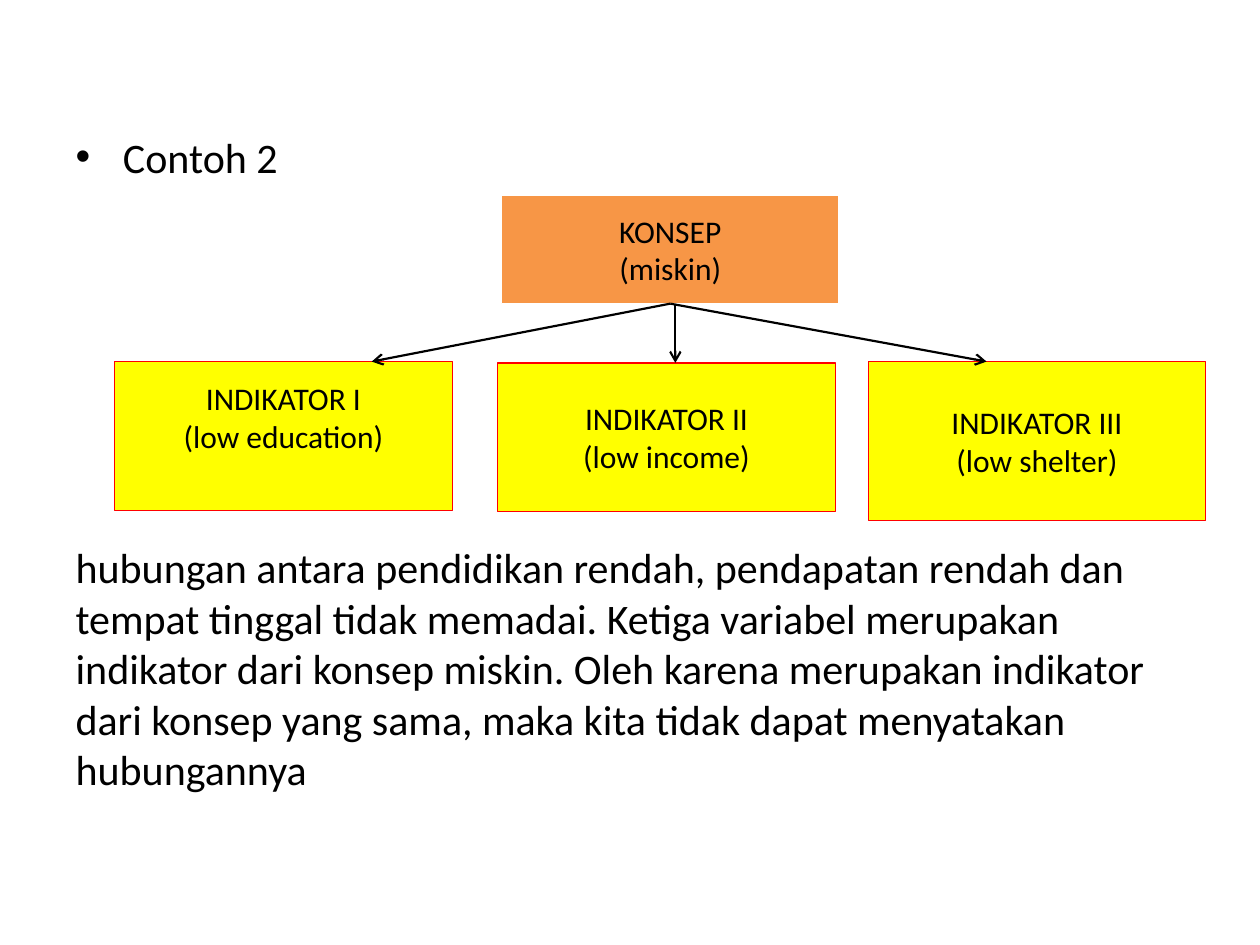
"""Build a slide that links the concept of poverty to its three indicators."""
from lxml import etree
from pptx import Presentation
from pptx import util as u
from pptx.dml.color import RGBColor
from pptx.enum import shapes, text
from pptx.oxml.ns import qn

BLACK = RGBColor(0, 0, 0)
WHITE = RGBColor(255, 255, 255)
ORANGE = RGBColor(0xF7, 0x96, 0x46)
YELLOW = RGBColor(255, 255, 0)
RED = RGBColor(255, 0, 0)

deck = Presentation()
deck.slide_width, deck.slide_height = u.Inches(10), u.Inches(7.5)
COLUMN, ROW = deck.slide_width / 100, deck.slide_height / 75


def place(column, row):
    return round(column * COLUMN), round(row * ROW)


def style(para, size):
    para.font.name = "Calibri"
    para.font.size = u.Pt(size)
    para.font.color.rgb = BLACK


page = deck.slides.add_slide(deck.slide_layouts.get_by_name("Title and Content"))
title = page.shapes.title.element
title.getparent().remove(title)

body = page.placeholders[1]
body.left, body.top = place(5, 9.9)
body.width, body.height = place(90, 57.1)
frame = body.text_frame
frame.auto_size = text.MSO_AUTO_SIZE.NONE
frame.text = (
    "Contoh 2\n"
    "hubungan antara pendidikan rendah, pendapatan rendah dan tempat tinggal "
    "tidak memadai. Ketiga variabel merupakan indikator dari konsep miskin. "
    "Oleh karena merupakan indikator dari konsep yang sama, maka kita tidak "
    "dapat menyatakan hubungannya"
)
heading, explanation = frame.paragraphs
heading.space_before = u.Pt(0)
explanation.space_before = u.Pt(206)
properties = explanation._p.get_or_add_pPr()
properties.set("marL", "0")
properties.set("indent", "0")
etree.SubElement(properties, qn("a:buNone"))
for para in frame.paragraphs:
    style(para, 24)

BOX_WIDTH = 26.8
boxes = {}
for name, detail, column, row, height, fill, line, bottom in (
    ("KONSEP", "(miskin)", 39.8, 15.5, 8.6, ORANGE, WHITE, 0.05),
    ("INDIKATOR I", "(low education)", 9.1, 28.7, 11.8, YELLOW, RED, 0.35),
    ("INDIKATOR II", "(low income)", 39.5, 28.8, 11.8, YELLOW, RED, 0.05),
    ("INDIKATOR III", "(low shelter)", 68.9, 28.7, 12.6, YELLOW, RED, 0.05),
):
    box = page.shapes.add_shape(
        shapes.MSO_SHAPE.RECTANGLE, *place(column, row), *place(BOX_WIDTH, height)
    )
    box.shadow.inherit = False
    box.fill.solid()
    box.fill.fore_color.rgb = fill
    box.line.color.rgb = line
    box.line.width = u.Pt(0.75)
    frame = box.text_frame
    frame.word_wrap = False
    frame.vertical_anchor = text.MSO_ANCHOR.MIDDLE
    frame.margin_bottom = u.Inches(bottom)
    frame.text = f"{name}\n{detail}"
    for para in frame.paragraphs:
        para.alignment = text.PP_ALIGN.CENTER
        style(para, 18)
    boxes[name] = box

for start, end, row, joined in (
    (53.2, 29.5, 28.7, True),
    (53.2, 78.3, 28.7, True),
    (53.6, 53.6, 28.8, False),
):
    arrow = page.shapes.add_connector(
        shapes.MSO_CONNECTOR.STRAIGHT, *place(start, 24.1), *place(end, row)
    )
    if joined:
        arrow.begin_connect(boxes["KONSEP"], 2)
    arrow.line.color.rgb = BLACK
    arrow.line.width = u.Pt(1.25)
    etree.SubElement(arrow.line._get_or_add_ln(), qn("a:tailEnd"), type="arrow")
    etree.SubElement(arrow._element.spPr, qn("a:effectLst"))

deck.save("out.pptx")
